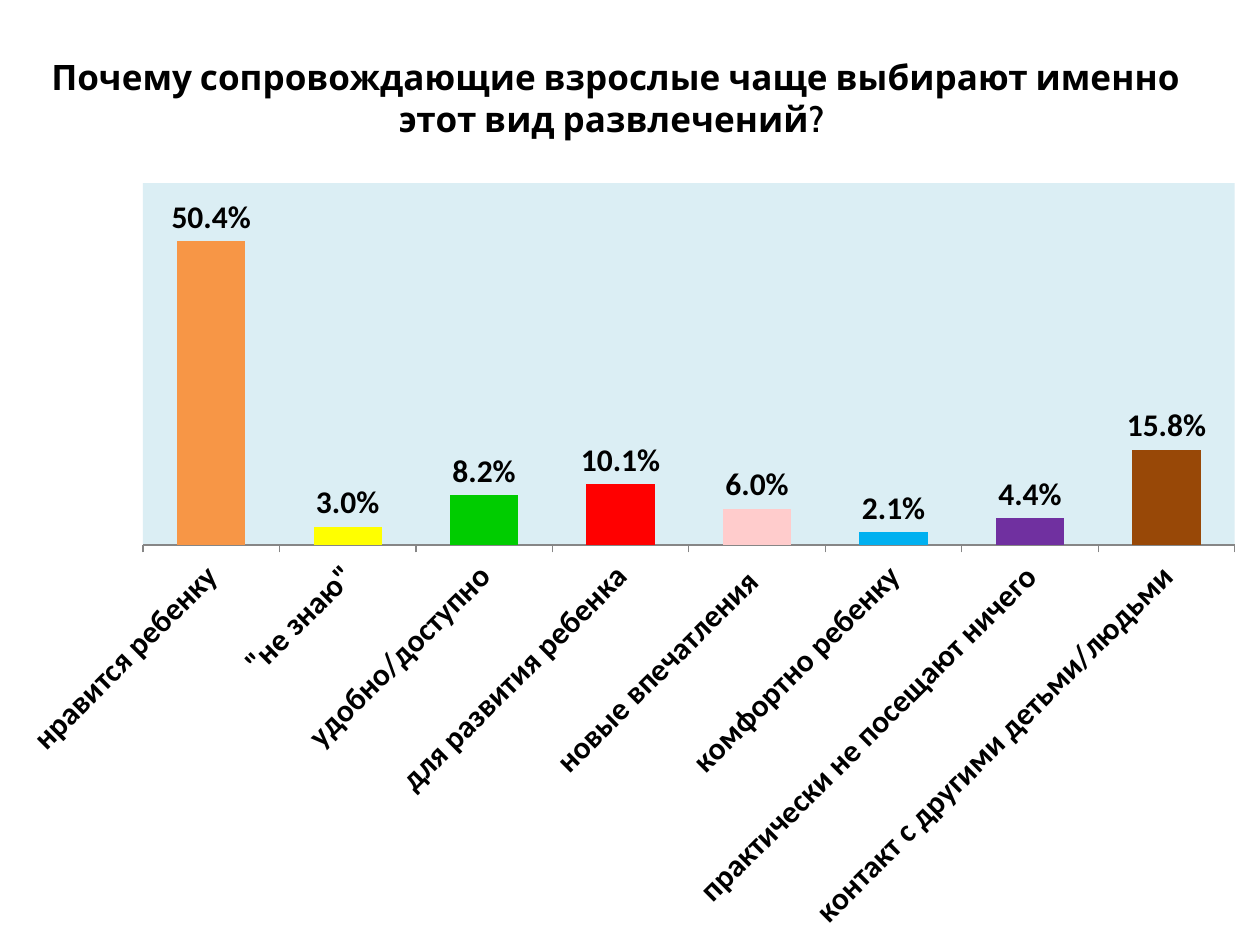
from dataclasses import dataclass

import pptx
import pptx.chart.data
import pptx.dml.color
import pptx.enum.chart
import pptx.enum.text
import pptx.oxml
import pptx.oxml.ns
import pptx.util
from pptx.util import Pt


@dataclass(frozen=True)
class Reason:
    label: str
    share: float
    color: str


@dataclass(frozen=True)
class Box:
    """A rectangle in points."""
    left: float
    top: float
    width: float
    height: float


TITLE = "Почему сопровождающие взрослые чаще выбирают именно этот вид развлечений? "
REASONS = [
    Reason("нравится ребенку", 0.504, "F79646"),
    Reason('"не знаю"', 0.03, "FFFF00"),
    Reason("удобно/доступно", 0.082, "00CC00"),
    Reason("для развития ребенка", 0.101, "FF0000"),
    Reason("новые впечатления ", 0.06, "FFCCCC"),
    Reason("комфортно ребенку", 0.021, "00B0F0"),
    Reason("практически не посещают ничего", 0.044, "7030A0"),
    Reason("контакт с другими детьми/людьми", 0.158, "984807"),
]
PERCENT = "0.0%"
CHART_BOX = Box(0, 96, 720, 444)
PLOT_BOX = Box(81.7, 8.6, 623.9, 206.8)


def rgb(code: str) -> pptx.dml.color.RGBColor:
    return pptx.dml.color.RGBColor.from_string(code)


def style_font(font, name: str, size: float, bold: bool) -> None:
    font.name = name
    font.size = Pt(size)
    font.bold = bold
    font.color.rgb = rgb("000000")


def add_title(slide) -> None:
    frame = slide.shapes.add_textbox(Pt(0), Pt(22.5), Pt(703.5), Pt(90)).text_frame
    frame.word_wrap = True
    frame.vertical_anchor = pptx.enum.text.MSO_ANCHOR.TOP
    frame.margin_top = Pt(9)
    frame.text = TITLE
    heading = frame.paragraphs[0]
    heading.alignment = pptx.enum.text.PP_ALIGN.CENTER
    style_font(heading.runs[0].font, "Cabin", 20, True)


def set_plot_area(chart, plot: Box, color: str) -> None:
    """Place the inner plot area, relative to the chart's corner, and fill it."""
    namespaces = pptx.oxml.ns.nsdecls("c", "a")
    plot_area = chart.plots[0]._element.getparent()
    for old_layout in plot_area.findall(pptx.oxml.ns.qn("c:layout")):
        plot_area.remove(old_layout)
    plot_area.insert(0, pptx.oxml.parse_xml(
        f'<c:layout {namespaces}><c:manualLayout><c:layoutTarget val="inner"/>'
        '<c:xMode val="edge"/><c:yMode val="edge"/>'
        f'<c:x val="{plot.left / CHART_BOX.width}"/>'
        f'<c:y val="{plot.top / CHART_BOX.height}"/>'
        f'<c:w val="{plot.width / CHART_BOX.width}"/>'
        f'<c:h val="{plot.height / CHART_BOX.height}"/>'
        '</c:manualLayout></c:layout>'))
    plot_area.append(pptx.oxml.parse_xml(
        f'<c:spPr {namespaces}><a:solidFill><a:srgbClr val="{color}"/></a:solidFill>'
        '<a:ln><a:noFill/></a:ln></c:spPr>'))


def style_axes(chart) -> None:
    reasons_axis = chart.category_axis
    reasons_axis.has_major_gridlines = False
    reasons_axis.major_tick_mark = pptx.enum.chart.XL_TICK_MARK.OUTSIDE
    reasons_axis.format.line.color.rgb = rgb("868686")
    reasons_axis.format.line.width = Pt(0.75)
    style_font(reasons_axis.tick_labels.font, "Calibri", 18, True)
    label_body = reasons_axis._element.find(
        f'{pptx.oxml.ns.qn("c:txPr")}/{pptx.oxml.ns.qn("a:bodyPr")}')
    label_body.set("rot", str(-45 * 60000))
    label_body.set("vert", "horz")

    share_axis = chart.value_axis
    share_axis.minimum_scale = 0
    share_axis.maximum_scale = 0.6
    share_axis.has_major_gridlines = False
    share_axis.visible = False


def add_reasons_chart(slide) -> None:
    data = pptx.chart.data.CategoryChartData(number_format=PERCENT)
    data.categories = [reason.label for reason in REASONS]
    data.add_series("Series 1", [reason.share for reason in REASONS])
    chart = slide.shapes.add_chart(
        pptx.enum.chart.XL_CHART_TYPE.COLUMN_CLUSTERED,
        Pt(CHART_BOX.left), Pt(CHART_BOX.top),
        Pt(CHART_BOX.width), Pt(CHART_BOX.height), data).chart
    chart.has_title = False
    chart.has_legend = False
    style_font(chart.font, "Calibri", 10, False)
    style_axes(chart)

    columns = chart.plots[0]
    columns.gap_width = 100
    columns.vary_by_categories = False
    shares = columns.series[0]
    shares.format.fill.solid()
    shares.format.fill.fore_color.rgb = rgb("4F81BD")
    for index, reason in enumerate(REASONS):
        fill = shares.points[index].format.fill
        fill.solid()
        fill.fore_color.rgb = rgb(reason.color)

    labels = shares.data_labels
    labels.show_value = True
    labels.number_format = PERCENT
    labels.number_format_is_linked = False
    labels.position = pptx.enum.chart.XL_LABEL_POSITION.OUTSIDE_END
    style_font(labels.font, "Calibri", 18, True)
    set_plot_area(chart, PLOT_BOX, "DBEEF4")


def main() -> None:
    presentation = pptx.Presentation()
    presentation.slide_width = Pt(720)
    presentation.slide_height = Pt(540)
    slide = presentation.slides.add_slide(presentation.slide_layouts[6])
    add_title(slide)
    add_reasons_chart(slide)
    presentation.save("out.pptx")


if __name__ == "__main__":
    main()
